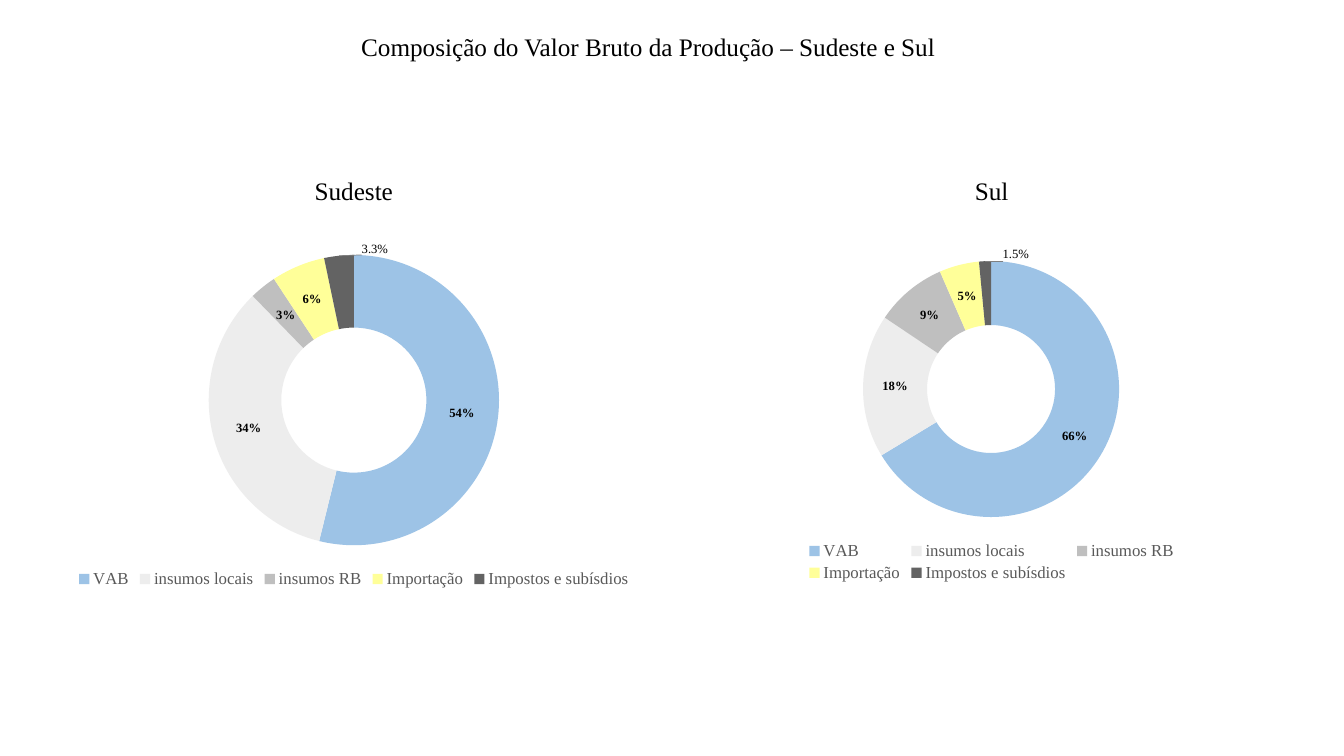
import pptx
import pptx.chart.data
import pptx.dml.color
import pptx.enum.chart
import pptx.enum.text
import pptx.oxml
import pptx.oxml.ns
import pptx.util

Inches = pptx.util.Inches
Pt = pptx.util.Pt
RGB = pptx.dml.color.RGBColor
ALIGN = pptx.enum.text.PP_ALIGN
BLACK = RGB(0x00, 0x00, 0x00)
GREY = RGB(0x59, 0x59, 0x59)
LEAD = RGB(0x80, 0x80, 0x80)
SERIF = "Times New Roman"
PARTS = [
    ("VAB", RGB(0x9D, 0xC3, 0xE6)),
    ("insumos locais", RGB(0xED, 0xED, 0xED)),
    ("insumos RB", RGB(0xBF, 0xBF, 0xBF)),
    ("Importação", RGB(0xFF, 0xFF, 0x99)),
    ("Impostos e subísdios", RGB(0x63, 0x63, 0x63)),
]


def set_font(font, size, color=BLACK, name=SERIF, bold=False):
    font.size = Pt(size)
    font.name = name
    font.bold = bold
    font.color.rgb = color


def put_text(shape, text, box, align=ALIGN.CENTER):
    shape.left, shape.top, shape.width, shape.height = map(Inches, box)
    frame = shape.text_frame
    frame.text = text
    frame.word_wrap = True
    frame.auto_size = pptx.enum.text.MSO_AUTO_SIZE.NONE
    frame.vertical_anchor = pptx.enum.text.MSO_ANCHOR.TOP
    frame.margin_left = frame.margin_right = Inches(0.05)
    frame.margin_top = frame.margin_bottom = Inches(0.05)
    para = frame.paragraphs[0]
    para.alignment = align
    set_font(para.font, 18)


def set_place(node, index, values, inner=False):
    for old in node.findall(pptx.oxml.ns.qn("c:layout")):
        node.remove(old)
    tags = '<c:layoutTarget val="inner"/>' if inner else ""
    if len(values) == 4:
        tags += '<c:xMode val="edge"/><c:yMode val="edge"/>'
    for tag, value in zip("xywh", values):
        tags += f'<c:{tag} val="{value:.4f}"/>'
    space = pptx.oxml.ns.nsdecls("c")
    node.insert(index, pptx.oxml.parse_xml(
        f"<c:layout {space}><c:manualLayout>{tags}</c:manualLayout></c:layout>"))


def add_leads(labels):
    space = pptx.oxml.ns.nsdecls("c", "a")
    labels.append(pptx.oxml.parse_xml(
        f'<c:leaderLines {space}><c:spPr><a:ln w="6350"><a:solidFill>'
        f'<a:srgbClr val="{LEAD}"/></a:solidFill></a:ln></c:spPr>'
        "</c:leaderLines>"))


def add_ring(slide, box, values, ring, key, shift):
    left, top, width, height = box

    def scale(area):
        x, y, w, h = area
        return (x - left) / width, (y - top) / height, w / width, h / height

    data = pptx.chart.data.CategoryChartData()
    data.categories = [name for name, color in PARTS]
    data.add_series("Series 1", values)
    chart = slide.shapes.add_chart(
        pptx.enum.chart.XL_CHART_TYPE.DOUGHNUT, *map(Inches, box), data).chart
    chart.has_title = False
    set_font(chart.font, 10, name="Arial")
    chart.has_legend = True
    chart.legend.position = pptx.enum.chart.XL_LEGEND_POSITION.BOTTOM
    chart.legend.include_in_layout = False
    set_font(chart.legend.font, 12, GREY)

    chart.plots[0].vary_by_categories = True
    series = chart.plots[0].series[0]
    for index, (name, color) in enumerate(PARTS):
        fill = series.points[index].format.fill
        fill.solid()
        fill.fore_color.rgb = color
    labels = series.data_labels
    labels.show_percentage = True
    labels.show_value = False
    labels.number_format = "0%"
    labels.number_format_is_linked = False
    set_font(labels.font, 9, bold=True)

    last = len(PARTS) - 1
    frame = series.points[last].data_label.text_frame
    frame.text = f"{values[last]}%"
    set_font(frame.paragraphs[0].runs[0].font, 9)

    root = chart._chartSpace
    set_place(root.xpath(".//c:plotArea")[0], 0, scale(ring), inner=True)
    set_place(root.xpath(".//c:legend")[0], 1, scale(key))
    set_place(root.xpath(".//c:dLbl")[0], 1,
              (shift[0] / width, shift[1] / height))
    add_leads(root.xpath(".//c:ser/c:dLbls")[0])


def main():
    deck = pptx.Presentation()
    deck.slide_width = Inches(13.33)
    deck.slide_height = Inches(7.5)
    slide = deck.slides.add_slide(deck.slide_layouts[5])
    put_text(slide.shapes.title,
             "Composição do Valor Bruto da Produção – Sudeste e Sul",
             (1.69, 0.26, 9.48, 0.4))
    for text, box, align in [
        ("Sudeste", (3.07, 1.69, 0.88, 0.4), ALIGN.LEFT),
        ("Sul", (9.21, 1.69, 1.25, 0.4), ALIGN.CENTER),
    ]:
        label = slide.shapes.add_textbox(*map(Inches, box))
        put_text(label, text, box, align)
    add_ring(slide, (-0.71, 2.4, 8.44, 3.48), (54, 34, 3, 6, 3.3),
             (2.07, 2.53, 2.88, 2.88), (0.73, 5.61, 5.56, 0.28), (0.32, -0.44))
    add_ring(slide, (6.04, 2.45, 7.59, 3.36), (66, 18, 9, 5, 1.5),
             (8.56, 2.59, 2.54, 2.54), (7.97, 5.34, 3.73, 0.49), (0.29, -0.39))
    deck.save("out.pptx")


if __name__ == "__main__":
    main()
